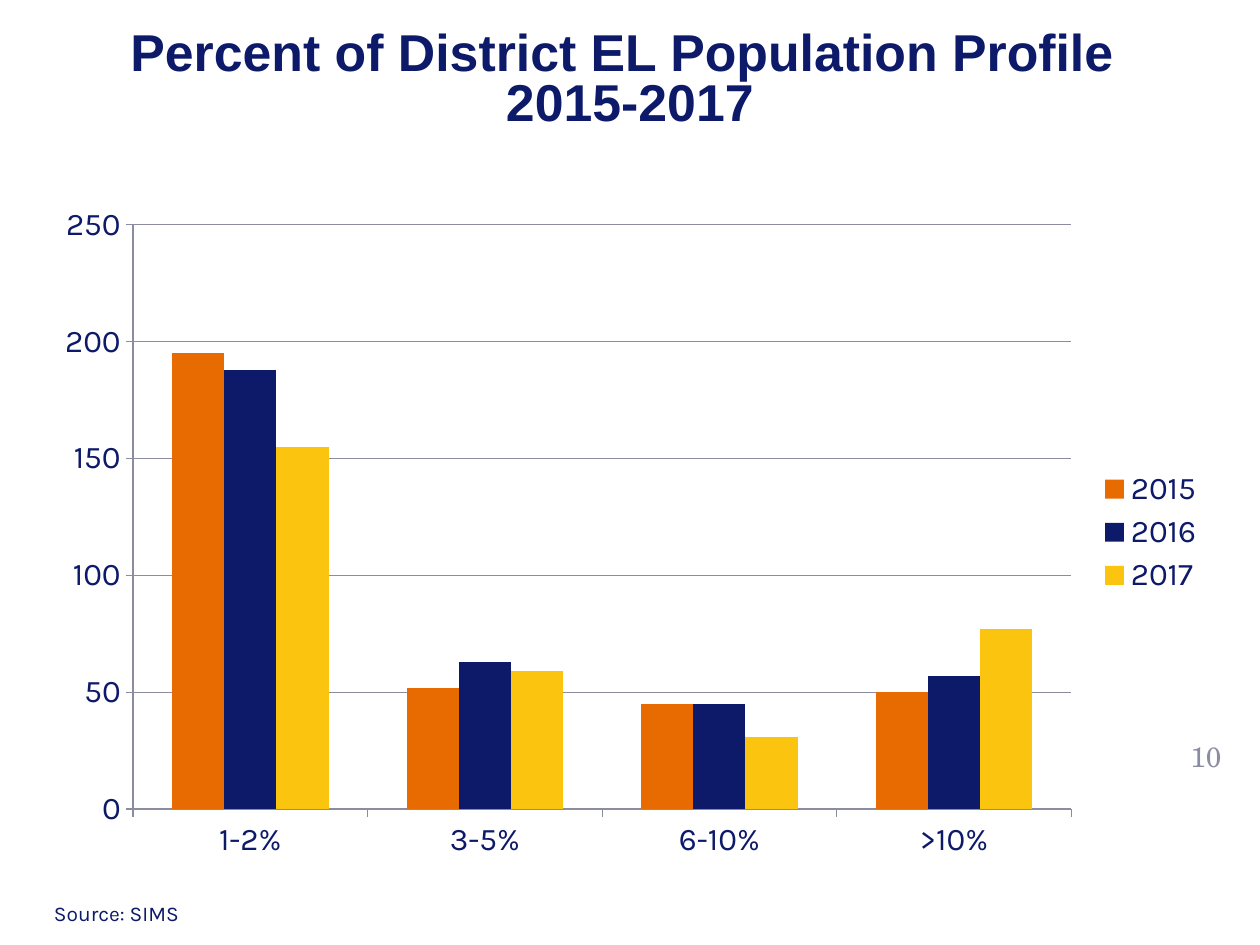
from pptx import Presentation
from pptx.chart.data import CategoryChartData
from pptx.dml.color import RGBColor
from pptx.enum.chart import XL_CHART_TYPE, XL_LEGEND_POSITION, XL_TICK_MARK
from pptx.enum.text import MSO_ANCHOR, MSO_AUTO_SIZE, PP_ALIGN
from pptx.util import Inches, Pt

NAVY = RGBColor(0x0D, 0x19, 0x69)
ORANGE = RGBColor(0xE8, 0x6B, 0x01)
YELLOW = RGBColor(0xFB, 0xC4, 0x0E)
GRAY = RGBColor(0x8C, 0x8C, 0xA1)
WHITE = RGBColor(0xFF, 0xFF, 0xFF)

CATEGORIES = ["1-2%", "3-5%", "6-10%", ">10%"]
SERIES = [
    ("2015", [195, 52, 45, 50], ORANGE),
    ("2016", [188, 63, 45, 57], NAVY),
    ("2017", [155, 59, 31, 77], YELLOW),
]


def set_font(font, color, **formats):
    for name, value in formats.items():
        setattr(font, name, value)
    font.color.rgb = color


def write_lines(tf, lines, color, para_format, font_format):
    tf.word_wrap = True
    for i, line in enumerate(lines):
        p = tf.add_paragraph() if i else tf.paragraphs[0]
        for name, value in para_format.items():
            setattr(p, name, value)
        r = p.add_run()
        r.text = line
        set_font(r.font, color, **font_format)


def add_title(s, lines):
    sp = s.shapes.title
    sp.left, sp.top = Inches(0.25), Inches(0.17)
    sp.width, sp.height = Inches(9.5), Inches(0.95)
    sp.fill.solid()
    sp.fill.fore_color.rgb = WHITE
    tf = sp.text_frame
    tf.auto_size = MSO_AUTO_SIZE.NONE
    tf.vertical_anchor = MSO_ANCHOR.MIDDLE
    write_lines(tf, lines, NAVY,
                {"alignment": PP_ALIGN.CENTER, "line_spacing": 0.8},
                {"name": "Arial", "size": Pt(29.6), "bold": True})


def add_label(s, text, box, color, anchor, align, **font_format):
    tf = s.shapes.add_textbox(*map(Inches, box)).text_frame
    tf.vertical_anchor = anchor
    write_lines(tf, [text], color, {"alignment": align}, font_format)


def add_column_chart(s, box):
    data = CategoryChartData()
    data.categories = CATEGORIES
    for name, values, _ in SERIES:
        data.add_series(name, values)
    chart = s.shapes.add_chart(
        XL_CHART_TYPE.COLUMN_CLUSTERED, *map(Inches, box), data).chart
    chart.has_title = False
    set_font(chart.font, NAVY, name="Karla", size=Pt(18))

    chart.has_legend = True
    chart.legend.position = XL_LEGEND_POSITION.RIGHT
    chart.legend.include_in_layout = False

    plot = chart.plots[0]
    plot.vary_by_categories = False
    plot.gap_width, plot.overlap = 150, 0
    for series, (_, _, color) in zip(plot.series, SERIES):
        series.format.fill.solid()
        series.format.fill.fore_color.rgb = color

    value_axis = chart.value_axis
    value_axis.minimum_scale, value_axis.maximum_scale = 0, 250
    value_axis.major_unit = 50
    value_axis.has_major_gridlines = True
    for axis in (chart.category_axis, value_axis):
        axis.major_tick_mark = XL_TICK_MARK.OUTSIDE
    for part in (chart.category_axis, value_axis, value_axis.major_gridlines):
        part.format.line.color.rgb = GRAY
        part.format.line.width = Pt(0.75)


def main():
    prs = Presentation()
    prs.slide_width, prs.slide_height = Inches(10), Inches(7.5)
    s = prs.slides.add_slide(prs.slide_layouts[5])
    add_title(s, ["Percent of District EL Population Profile ", "2015-2017"])
    add_column_chart(s, (0.33, 1.53, 9.33, 5.39))
    add_label(s, "10", (9.28, 5.75, 0.58, 0.5), GRAY, MSO_ANCHOR.MIDDLE,
              PP_ALIGN.CENTER, name="TeX Gyre Schola", size=Pt(16))
    add_label(s, "Source: SIMS", (0.33, 7.1, 4.92, 0.3), NAVY, MSO_ANCHOR.TOP,
              PP_ALIGN.LEFT, name="Karla", size=Pt(12))
    prs.save("out.pptx")


if __name__ == "__main__":
    main()
